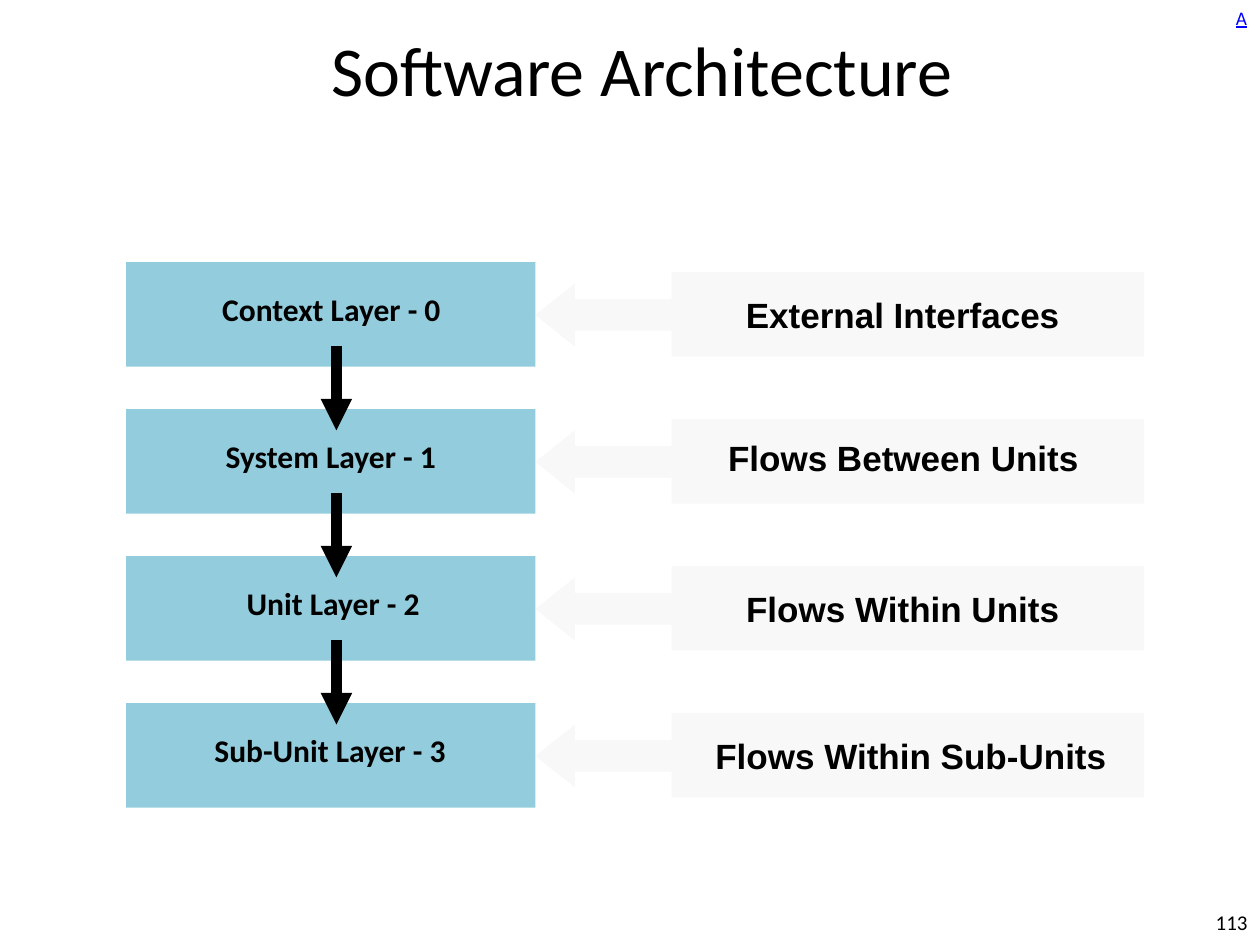
import pptx
import pptx.util
import pptx.dml.color
import pptx.enum.shapes
import pptx.enum.text
import pptx.oxml

Inches, Pt = pptx.util.Inches, pptx.util.Pt
SHAPE = pptx.enum.shapes.MSO_SHAPE
ALIGN = pptx.enum.text.PP_ALIGN
ANCHOR = pptx.enum.text.MSO_ANCHOR

COLORS = {"layer": "93CDDD", "flow": "F8F8F8", "text": "000000", "link": "0000FF"}
FORMATS = {
    "title": {"name": "Calibri", "size": Pt(40)},
    "layer": {"name": "Calibri", "size": Pt(18), "bold": True},
    "flow": {"name": "Arial", "size": Pt(20), "bold": True},
    "number": {"name": "Calibri", "size": Pt(12)},
    "link": {"name": "Calibri", "size": Pt(11), "underline": True},
}

# Layer name, its label left and width; flow name, its label left, top and width
# (label places are relative to the row)
ROWS = [
    ("Context Layer - 0", 0.17, 2.92, "External Interfaces", 4.75, 0.20, 2.83),
    ("System Layer - 1", 0.29, 2.67, "Flows Between Units", 4.42, 0.17, 3.5),
    ("Unit Layer - 2", 0.31, 2.67, "Flows Within Units", 4.75, 0.20, 2.83),
    ("Sub-Unit Layer - 3", 0.12, 3.0, "Flows Within Sub-Units", 4.46, 0.20, 3.54),
]
ROW_PITCH = 3.5 / 3


def rgb(name):
    return pptx.dml.color.RGBColor.from_string(COLORS[name])


def add_text(slide, text, box, style, color="text", align=ALIGN.CENTER,
             anchor=ANCHOR.TOP, wrap=True):
    tf = slide.shapes.add_textbox(*map(Inches, box)).text_frame
    tf.word_wrap = wrap
    tf.vertical_anchor = anchor
    p = tf.paragraphs[0]
    p.alignment = align
    r = p.add_run()
    r.text = text
    for key, value in FORMATS[style].items():
        setattr(r.font, key, value)
    r.font.color.rgb = rgb(color)


def add_block(slide, kind, box, color):
    sp = slide.shapes.add_shape(kind, *map(Inches, box))
    sp.shadow.inherit = False
    sp.fill.solid()
    sp.fill.fore_color.rgb = rgb(color)
    sp.line.fill.background()
    return sp


def add_down_arrow(slide, x, top, bottom):
    line = slide.shapes.add_connector(
        pptx.enum.shapes.MSO_CONNECTOR.STRAIGHT,
        Inches(x), Inches(top), Inches(x), Inches(bottom))
    line.line.color.rgb = rgb("text")
    line.line.width = Pt(6)
    ns = pptx.oxml.ns.nsdecls("a")
    line.line._get_or_add_ln().append(
        pptx.oxml.parse_xml(f'<a:tailEnd {ns} type="triangle"/>'))
    line._element.spPr.append(pptx.oxml.parse_xml(f"<a:effectLst {ns}/>"))


def add_row(slide, left, top, row):
    layer, layer_x, layer_w, flow, flow_x, flow_y, flow_w = row
    # Layer box with its label
    add_block(slide, SHAPE.RECTANGLE, (left, top, 3.25, 0.83), "layer")
    add_text(slide, layer, (left + layer_x, top + 0.17, layer_w, 0.5), "layer")
    # Flow box with its label
    add_block(slide, SHAPE.RECTANGLE, (left + 4.33, top + 0.08, 3.75, 0.67), "flow")
    add_text(slide, flow, (left + flow_x, top + flow_y, flow_w, 0.43), "flow")
    # Arrow from the flow to the layer
    arrow = add_block(slide, SHAPE.LEFT_ARROW,
                      (left + 3.25, top + 0.17, 1.25, 0.5), "flow")
    arrow.adjustments[1] = 0.625


def add_diagram(slide, left, top):
    for i, row in enumerate(ROWS):
        y = top + i * ROW_PITCH
        add_row(slide, left, y, row)
        if i:
            # Arrow from the layer above
            add_down_arrow(slide, left + 1.67, y - 0.5, y + 0.17)


def add_frame(slide):
    # Page number, corner link and title
    add_text(slide, "113", (9.25, 7.12, 0.75, 0.4), "number",
             align=ALIGN.RIGHT, anchor=ANCHOR.MIDDLE)
    add_text(slide, "A", (9.71, 0, 0.29, 0.29), "link", color="link",
             align=ALIGN.LEFT, wrap=False)
    add_text(slide, "Software Architecture", (0.97, 0.08, 8.25, 0.92), "title",
             anchor=ANCHOR.MIDDLE)


def main():
    prs = pptx.Presentation()
    prs.slide_width, prs.slide_height = Inches(10), Inches(7.5)
    slide = prs.slides.add_slide(prs.slide_layouts[6])
    add_frame(slide)
    add_diagram(slide, 1, 2.08)
    prs.save("out.pptx")


if __name__ == "__main__":
    main()
